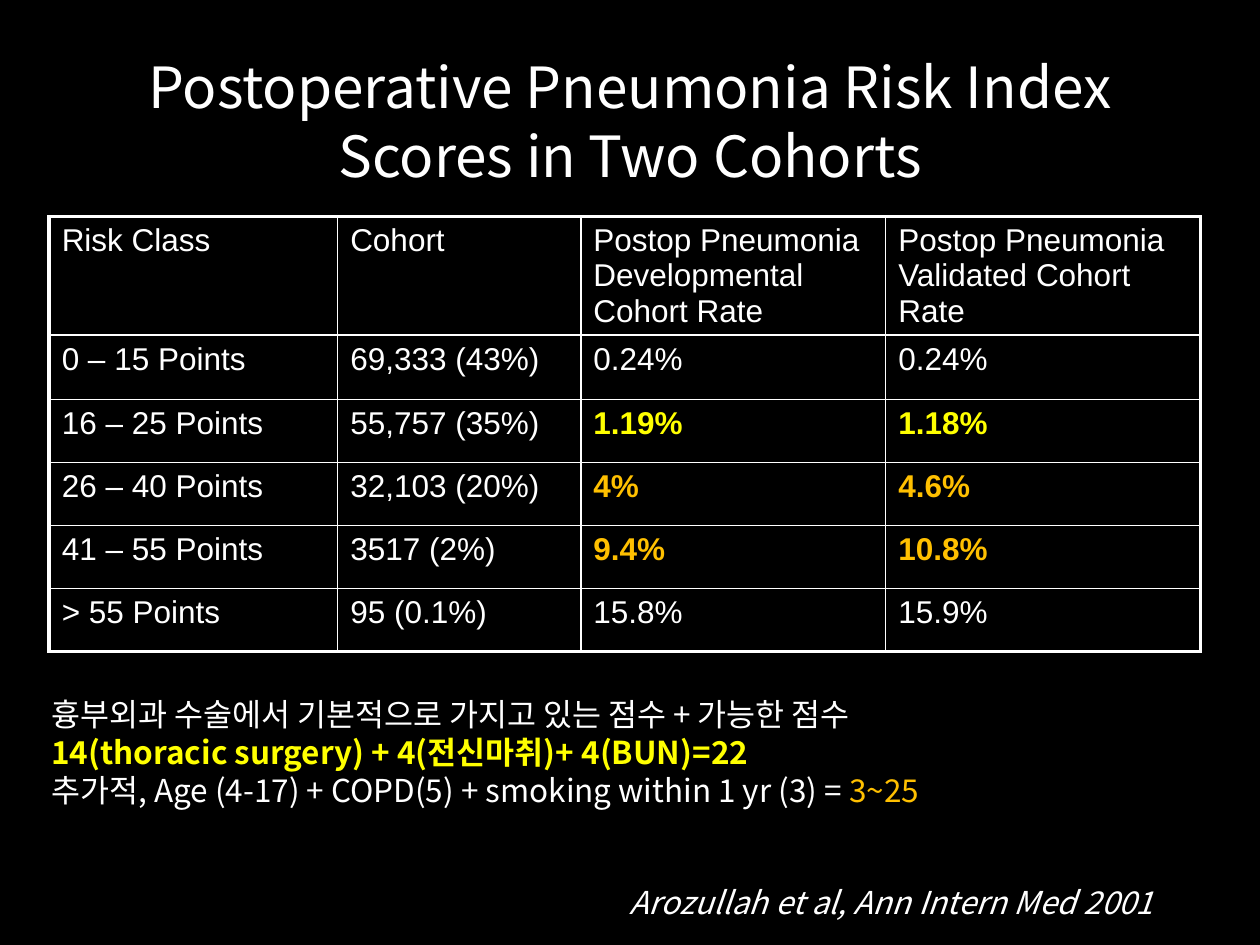
from lxml import etree
from pptx import Presentation
from pptx.dml.color import RGBColor
from pptx.enum.text import MSO_ANCHOR as Anchor, MSO_AUTO_SIZE as AutoSize, PP_ALIGN as Align
from pptx.oxml.ns import qn
from pptx.util import Inches, Pt

WHITE, YELLOW, ORANGE, BLACK = "FFFFFF", "FFFF00", "FFC000", "000000"
TEXT_FONT, TABLE_FONT = "Noto Sans CJK KR", "Arial"
OUTER, INNER = 2.25, 1

COLUMN_WIDTHS = [2.29, 1.93, 2.42, 2.5]
ROW_HEIGHTS = [0.94] + [0.51] + [0.5] * 4
ROWS = [
    ["Risk Class", "Cohort", "Postop Pneumonia Developmental Cohort Rate",
     "Postop Pneumonia Validated Cohort Rate"],
    ["0 – 15 Points", "69,333 (43%)", "0.24%", "0.24%"],
    ["16 – 25 Points", "55,757 (35%)", "1.19%", "1.18%"],
    ["26 – 40 Points", "32,103 (20%)", "4%", "4.6%"],
    ["41 – 55 Points", "3517 (2%)", "9.4%", "10.8%"],
    ["> 55 Points", "95 (0.1%)", "15.8%", "15.9%"],
]
RATE_COLORS = {2: YELLOW, 3: ORANGE, 4: ORANGE}  # highlighted rows


def rgb(value):
    return RGBColor.from_string(value)


class SlideBuilder:
    def __init__(self, slide):
        self.slide = slide

    def background(self, color):
        fill = self.slide.background.fill
        fill.solid()
        fill.fore_color.rgb = rgb(color)

    def format_run(self, run, size, font=TEXT_FONT, color=WHITE, bold=False, italic=False):
        run.font.size = Pt(size)
        run.font.name = font
        run.font.color.rgb = rgb(color)
        run.font.bold = bold
        run.font.italic = italic
        latin = run.font._element.find(qn("a:latin"))
        east_asian = etree.Element(qn("a:ea"), typeface=font)
        latin.addnext(east_asian)

    def text(self, box, paragraphs, size=18, align=Align.LEFT, anchor=Anchor.TOP,
             wrap=True, grow=True):
        """Each paragraph is a list of (text, run style) pairs."""
        shape = self.slide.shapes.add_textbox(*map(Inches, box))
        frame = shape.text_frame
        frame.word_wrap = wrap
        frame.auto_size = AutoSize.SHAPE_TO_FIT_TEXT if grow else AutoSize.NONE
        frame.vertical_anchor = anchor
        for index, runs in enumerate(paragraphs):
            paragraph = frame.add_paragraph() if index else frame.paragraphs[0]
            paragraph.alignment = align
            for words, style in runs:
                run = paragraph.add_run()
                run.text = words
                self.format_run(run, size, **style)

    def borders(self, cell, widths):
        properties = cell._tc.get_or_add_tcPr()
        for position, (side, width) in enumerate(widths.items()):
            line = etree.Element(qn(f"a:ln{side}"), w=str(Pt(width)))
            fill = etree.SubElement(line, qn("a:solidFill"))
            etree.SubElement(fill, qn("a:srgbClr"), val=WHITE)
            properties.insert(position, line)

    def table(self, left, top, rows, widths, heights):
        frame = self.slide.shapes.add_table(
            len(rows), len(widths), Inches(left), Inches(top),
            Inches(sum(widths)), Inches(sum(heights)))
        table = frame.table
        table.first_row = table.horz_banding = False
        for column, width in zip(table.columns, widths):
            column.width = Inches(width)
        for row, height in zip(table.rows, heights):
            row.height = Inches(height)

        last_row, last_column = len(rows) - 1, len(widths) - 1
        for r, values in enumerate(rows):
            for c, value in enumerate(values):
                cell = table.cell(r, c)
                cell.fill.background()
                cell.text_frame.text = value
                highlight = c >= 2 and r in RATE_COLORS
                self.format_run(cell.text_frame.paragraphs[0].runs[0], 18, TABLE_FONT,
                                RATE_COLORS[r] if highlight else WHITE, highlight)
                self.borders(cell, {
                    "L": OUTER if c == 0 else INNER,
                    "R": OUTER if c == last_column else INNER,
                    "T": OUTER if r == 0 else INNER,
                    "B": OUTER if r == last_row else INNER,
                })


def main():
    presentation = Presentation()
    presentation.slide_width, presentation.slide_height = Inches(10), Inches(7.5)
    builder = SlideBuilder(presentation.slides.add_slide(presentation.slide_layouts[6]))
    builder.background(BLACK)

    # Title
    builder.text((0.75, 0.33, 8.5, 1.25),
                 [[("Postoperative Pneumonia Risk Index Scores in Two Cohorts", {})]],
                 size=32.4, align=Align.CENTER, anchor=Anchor.MIDDLE, grow=False)

    # Risk class table
    builder.table(0.39, 1.72, ROWS, COLUMN_WIDTHS, ROW_HEIGHTS)

    # Citation
    builder.text((4.9, 6.96, 4.48, 0.4),
                 [[("Arozullah et al, Ann Intern Med 2001", {"italic": True})]], wrap=False)

    # Score notes
    builder.text((0.31, 5.47, 9.06, 1.01), [
        [("흉부외과 수술에서 기본적으로 가지고 있는 점수 + 가능한 점수", {})],
        [("14(thoracic surgery) + 4(전신마취)+ 4(BUN)=22", {"color": YELLOW, "bold": True})],
        [("추가적, Age (4-17) + COPD(5) + smoking within 1 yr (3) = ", {}),
         ("3~25", {"color": ORANGE})],
    ])

    presentation.save("out.pptx")


if __name__ == "__main__":
    main()
